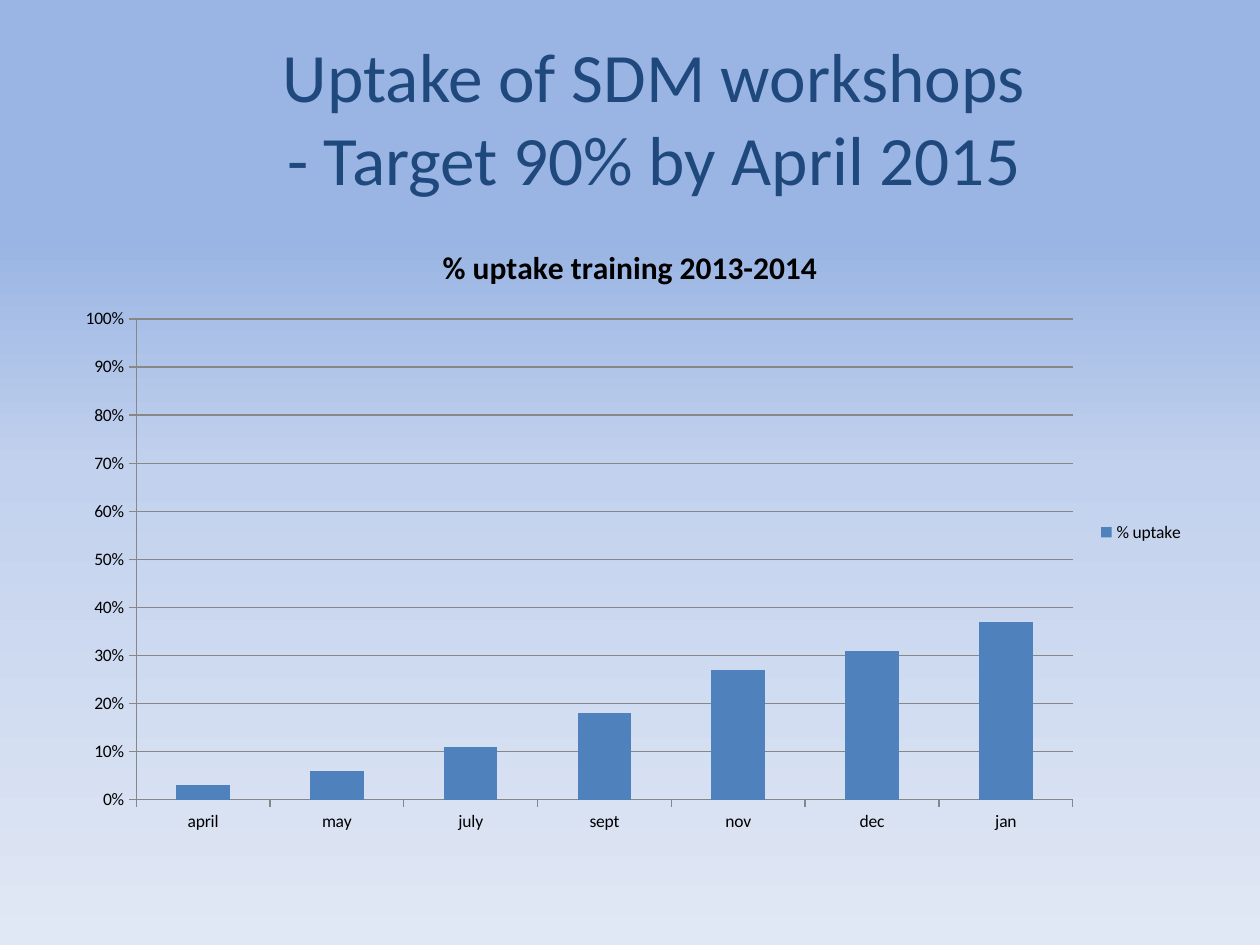
"""Build a slide with a column chart of workshop uptake."""
import copy

import pptx
import pptx.chart.data
import pptx.dml.color
import pptx.enum.chart
import pptx.enum.text
import pptx.oxml.ns
import pptx.util

Pt = pptx.util.Pt
FONT = "Calibri"
HUES = {"title": "1F497D", "text": "000000", "bar": "4F81BD", "line": "878787"}
STOPS = [(0.25, "9AB5E4"), (0.5, "C2D1ED"), (1, "E1E8F5")]
DATA = {"april": 0.03, "may": 0.06, "july": 0.11, "sept": 0.18,
        "nov": 0.27, "dec": 0.31, "jan": 0.37}


def color(code):
    return pptx.dml.color.RGBColor.from_string(code)


def style(font, size, hue, bold=False):
    font.name = FONT
    font.size = Pt(size)
    font.bold = bold
    font.color.rgb = color(HUES[hue])


def stroke(line):
    line.color.rgb = color(HUES["line"])
    line.width = Pt(0.75)


def paint_back(slide):
    fill = slide.background.fill
    fill.gradient()
    fill.gradient_angle = 270
    stops = next(slide.element.iter(pptx.oxml.ns.qn("a:gsLst")))
    stops.insert(1, copy.deepcopy(stops[0]))
    for stop, (place, code) in zip(fill.gradient_stops, STOPS):
        stop.position = place
        stop.color.rgb = color(code)


def set_title(slide, text):
    title = slide.shapes.title
    title.left, title.top = Pt(49.68), Pt(21.6)
    title.width, title.height = Pt(648), Pt(90)
    frame = title.text_frame
    frame.text = text
    frame.auto_size = pptx.enum.text.MSO_AUTO_SIZE.NONE
    frame.vertical_anchor = pptx.enum.text.MSO_ANCHOR.MIDDLE
    for para in frame.paragraphs:
        para.alignment = pptx.enum.text.PP_ALIGN.CENTER
        for run in para.runs:
            style(run.font, 39.6, "title")


def set_axes(chart):
    axis = chart.value_axis
    axis.minimum_scale, axis.maximum_scale, axis.major_unit = 0, 1, 0.1
    axis.tick_labels.number_format = "0%"
    axis.tick_labels.number_format_is_linked = False
    axis.has_major_gridlines = True
    stroke(axis.major_gridlines.format.line)
    for item in (axis, chart.category_axis):
        item.major_tick_mark = pptx.enum.chart.XL_TICK_MARK.OUTSIDE
        item.minor_tick_mark = pptx.enum.chart.XL_TICK_MARK.NONE
        stroke(item.format.line)


def add_chart(slide):
    data = pptx.chart.data.CategoryChartData(number_format="0%")
    data.categories = list(DATA)
    data.add_series("% uptake", list(DATA.values()))
    kind = pptx.enum.chart.XL_CHART_TYPE.COLUMN_CLUSTERED
    chart = slide.shapes.add_chart(
        kind, Pt(36), Pt(126), Pt(648), Pt(356.4), data).chart
    style(chart.font, 10, "text")
    chart.has_title = True
    frame = chart.chart_title.text_frame
    frame.text = "% uptake training 2013-2014"
    style(frame.paragraphs[0].runs[0].font, 18, "text", True)
    chart.chart_title.include_in_layout = False
    chart.has_legend = True
    chart.legend.position = pptx.enum.chart.XL_LEGEND_POSITION.RIGHT
    chart.legend.include_in_layout = False
    plot = chart.plots[0]
    plot.gap_width = 150
    plot.vary_by_categories = False
    fill = plot.series[0].format.fill
    fill.solid()
    fill.fore_color.rgb = color(HUES["bar"])
    set_axes(chart)


def main():
    deck = pptx.Presentation()
    deck.slide_width, deck.slide_height = Pt(720), Pt(540)
    slide = deck.slides.add_slide(deck.slide_layouts[5])
    paint_back(slide)
    set_title(slide, "Uptake of SDM workshops\v- Target 90% by April 2015")
    add_chart(slide)
    deck.save("out.pptx")


if __name__ == "__main__":
    main()
